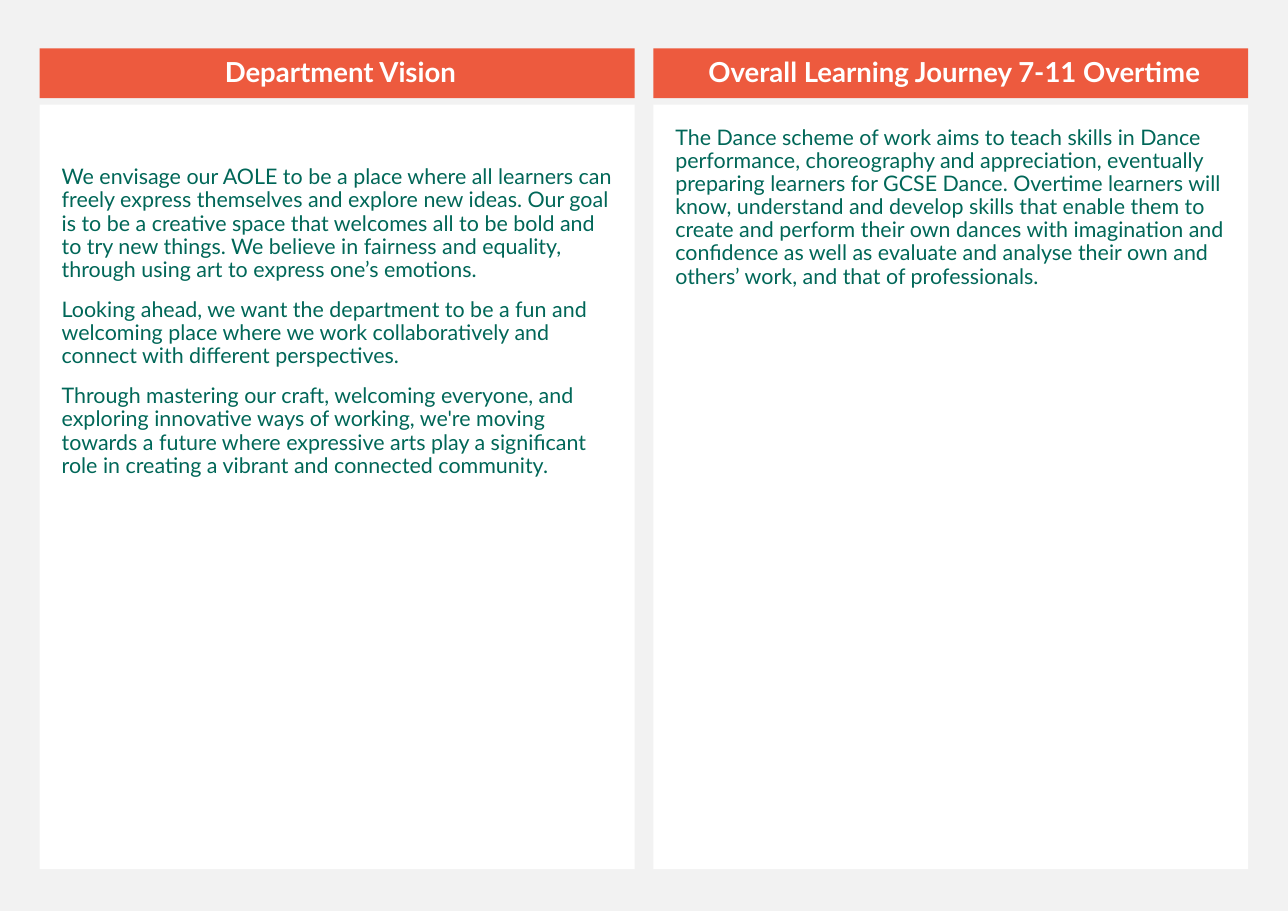
import dataclasses

import pptx
import pptx.dml.color
import pptx.enum.shapes
import pptx.enum.text
import pptx.util

Inches = pptx.util.Inches
Pt = pptx.util.Pt
Align = pptx.enum.text.PP_ALIGN
Anchor = pptx.enum.text.MSO_ANCHOR

COLORS = {"page": "F2F2F2", "header": "ED5A3E", "panel": "FFFFFF",
          "heading": "FFFFFF", "body": "006758"}
MARGIN, COL_W, COL_STEP = 0.36, 5.4, 5.57
HEADER_Y, HEADER_H = 0.44, 0.45
PANEL_Y, PANEL_H = 0.95, 6.94


@dataclasses.dataclass(frozen=True)
class Style:
    fill: str
    color: str
    size: int
    bold: bool
    align: Align
    anchor: Anchor
    insets: tuple[float, float, float, float]


@dataclasses.dataclass(frozen=True)
class Column:
    heading: str
    paragraphs: tuple[str, ...]
    top_inset: float


HEADER = Style("header", "heading", 18, True, Align.CENTER, Anchor.MIDDLE,
               (0.16, 0.05, 0.1, 0.05))
PANEL = Style("panel", "body", 14, False, Align.LEFT, Anchor.TOP,
              (0.2, 0.2, 0.2, 0.2))

COLUMNS = (
    Column("Department Vision", (
        "We envisage our AOLE to be a place where all learners can freely "
        "express themselves and explore new ideas. Our goal is to be a "
        "creative space that welcomes all to be bold and to try new things. "
        "We believe in fairness and equality, through using art to express "
        "one’s emotions.",
        "Looking ahead, we want the department to be a fun and welcoming "
        "place where we work collaboratively and connect with different "
        "perspectives.",
        "Through mastering our craft, welcoming everyone, and exploring "
        "innovative ways of working, we're moving towards a future where "
        "expressive arts play a significant role in creating a vibrant and "
        "connected community.",
    ), 0.56),
    Column("Overall Learning Journey 7-11 Overtime", (
        "The Dance scheme of work aims to teach skills in Dance performance, "
        "choreography and appreciation, eventually preparing learners for "
        "GCSE Dance. Overtime learners will know, understand and develop "
        "skills that enable them to create and perform their own dances with "
        "imagination and confidence as well as evaluate and analyse their own "
        "and others’ work, and that of professionals.",
    ), 0.2),
)


def rgb(name: str) -> pptx.dml.color.RGBColor:
    """Return the named palette colour."""
    return pptx.dml.color.RGBColor.from_string(COLORS[name])


def apply(target: object, values: dict[str, object]) -> None:
    """Set each format value on the target."""
    for name, value in values.items():
        setattr(target, name, value)


def add_box(slide: pptx.slide.Slide) -> pptx.shapes.autoshape.Shape:
    """Add a plain rectangle to be placed and formatted later."""
    return slide.shapes.add_shape(
        pptx.enum.shapes.MSO_SHAPE.RECTANGLE, 0, 0, Inches(1), Inches(1))


def format_box(s: pptx.shapes.autoshape.Shape,
               box: tuple[float, float, float, float],
               texts: tuple[str, ...], style: Style) -> None:
    """Place a box, colour it and fill it with styled paragraphs."""
    apply(s, dict(zip(("left", "top", "width", "height"), map(Inches, box))))
    s.shadow.inherit = False
    s.fill.solid()
    s.fill.fore_color.rgb = rgb(style.fill)
    s.line.fill.background()
    tf = s.text_frame
    sides = ("margin_left", "margin_top", "margin_right", "margin_bottom")
    apply(tf, dict(zip(sides, map(Inches, style.insets))))
    apply(tf, {"word_wrap": True, "vertical_anchor": style.anchor,
               "auto_size": pptx.enum.text.MSO_AUTO_SIZE.NONE})
    for i, text in enumerate(texts):
        p = tf.add_paragraph() if i else tf.paragraphs[0]
        apply(p, {"alignment": style.align, "line_spacing": 0.9,
                  "space_before": Pt(11)})
        r = p.add_run()
        r.text = text
        apply(r.font, {"name": "Lato", "size": Pt(style.size),
                       "bold": style.bold})
        r.font.color.rgb = rgb(style.color)


def main() -> None:
    """Build the two-column department vision slide."""
    prs = pptx.Presentation()
    apply(prs, {"slide_width": Inches(11.69), "slide_height": Inches(8.27)})
    slide = prs.slides.add_slide(prs.slide_layouts.get_by_name("Title Only"))
    slide.background.fill.solid()
    slide.background.fill.fore_color.rgb = rgb("page")
    for i, col in enumerate(COLUMNS):
        x = MARGIN + i * COL_STEP
        header = add_box(slide) if i else slide.shapes.title
        format_box(header, (x, HEADER_Y, COL_W, HEADER_H),
                   (col.heading,), HEADER)
        left, _, right, bottom = PANEL.insets
        style = dataclasses.replace(
            PANEL, insets=(left, col.top_inset, right, bottom))
        format_box(add_box(slide), (x, PANEL_Y, COL_W, PANEL_H),
                   col.paragraphs, style)
    prs.save("out.pptx")


if __name__ == "__main__":
    main()
